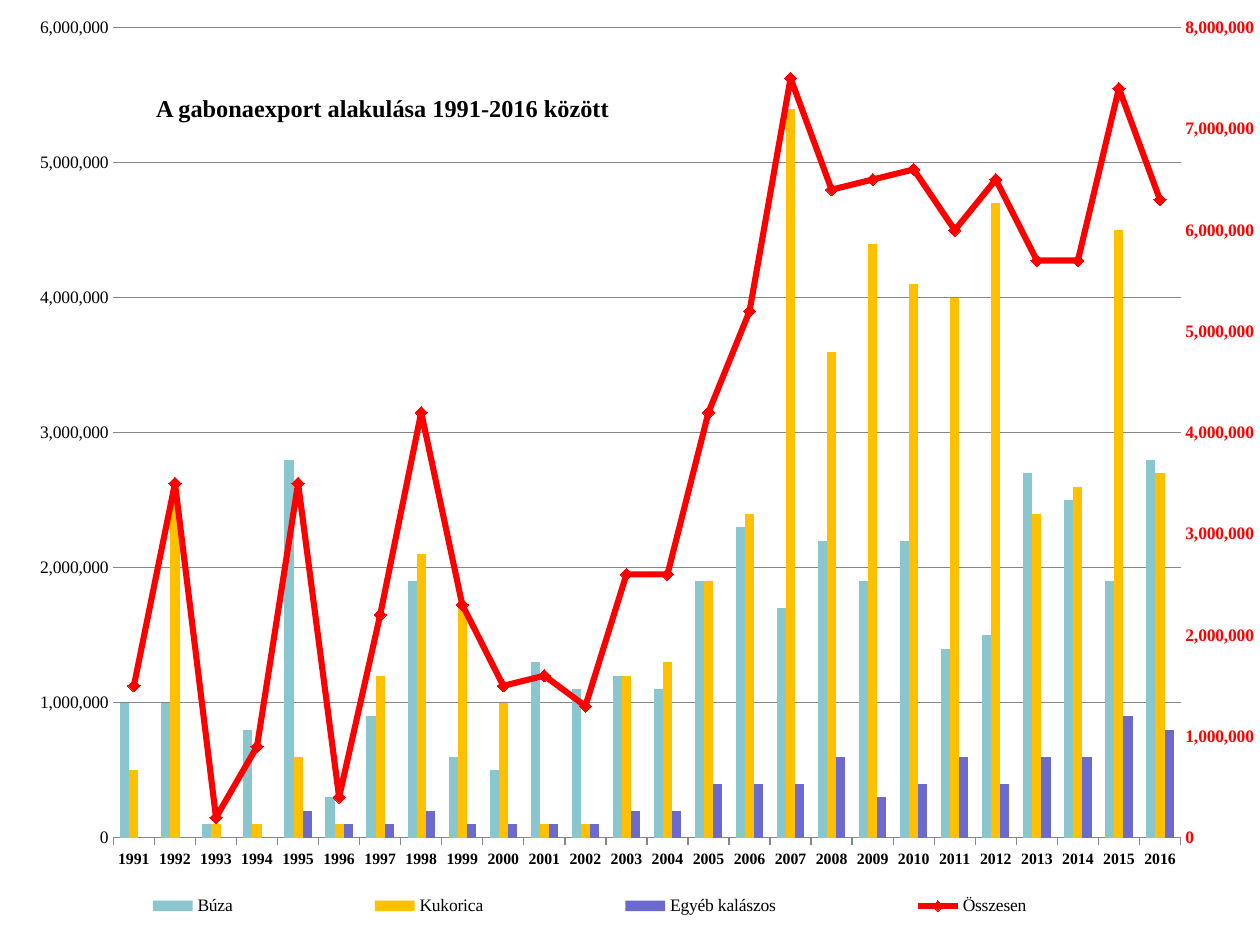
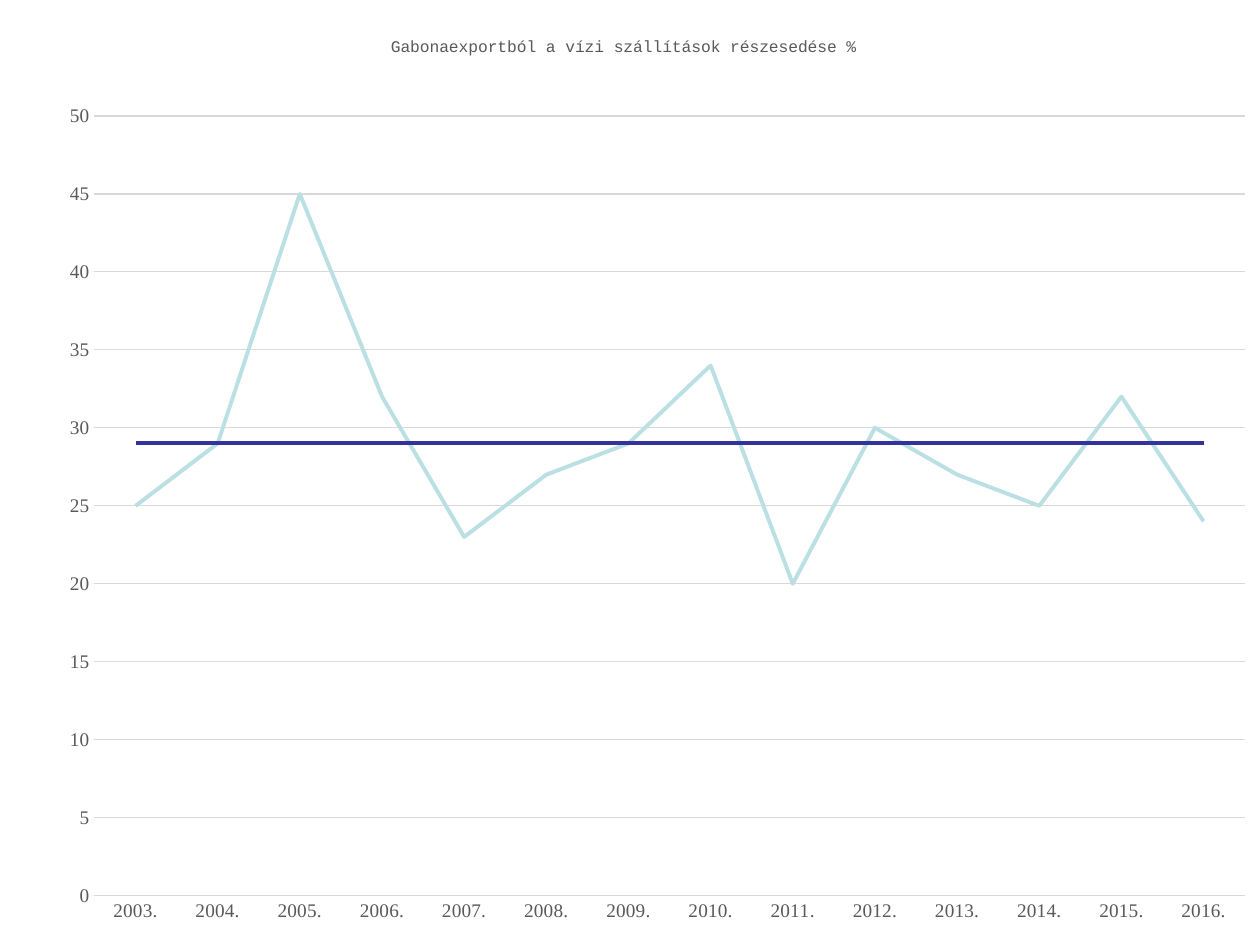
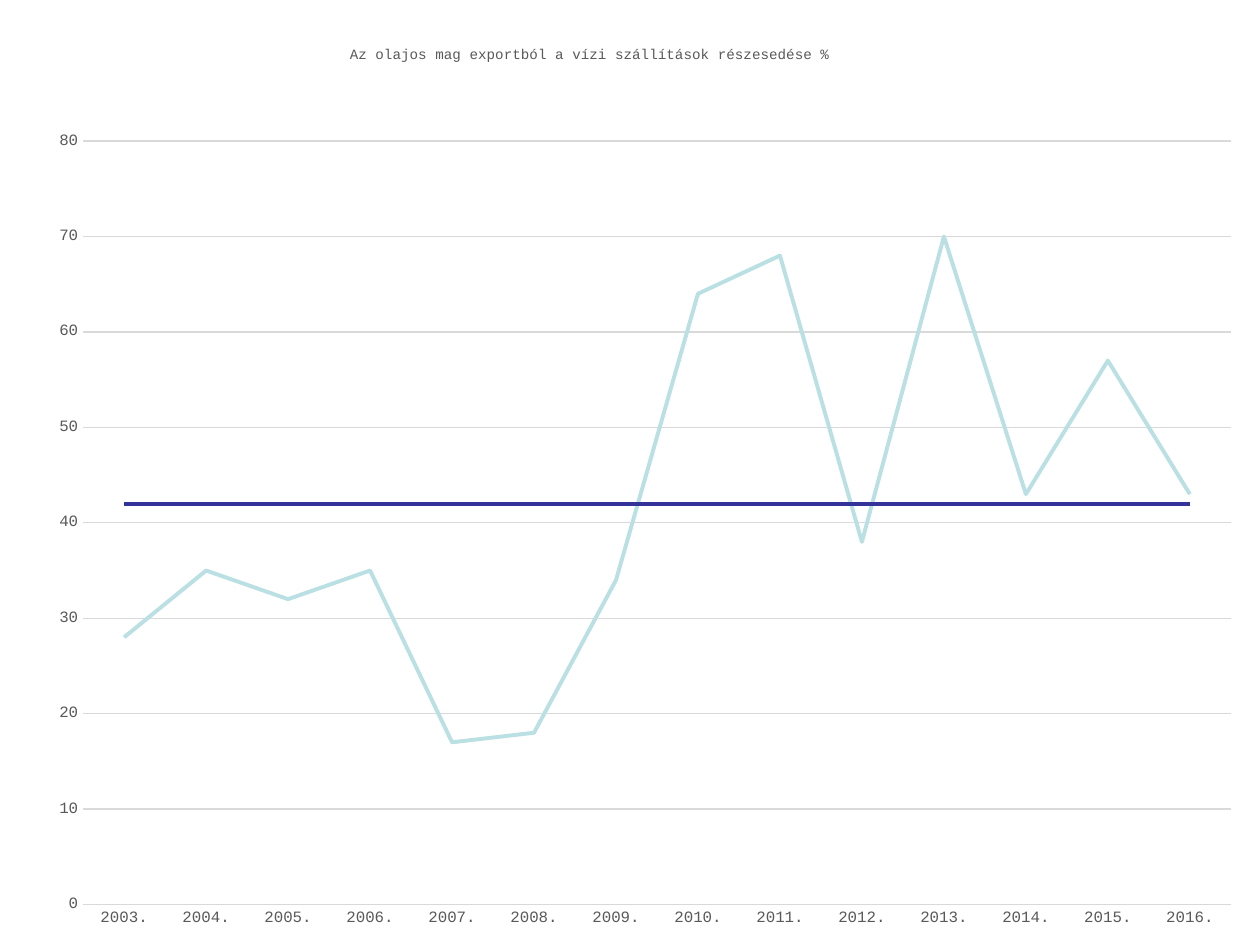
from copy import deepcopy

from pptx import Presentation
from pptx.chart.axis import CategoryAxis, ValueAxis
from pptx.chart.data import CategoryChartData
from pptx.dml.color import RGBColor
from pptx.enum.chart import XL_CHART_TYPE as ChartType
from pptx.enum.chart import XL_LEGEND_POSITION as LegendPosition
from pptx.enum.chart import XL_MARKER_STYLE as MarkerStyle
from pptx.enum.chart import XL_TICK_MARK as TickMark
from pptx.enum.text import MSO_AUTO_SIZE as AutoSize
from pptx.enum.text import PP_ALIGN as Align
from pptx.oxml import parse_xml
from pptx.oxml.ns import nsdecls, qn
from pptx.util import Inches, Pt

SERIF = "Times New Roman"
MONO = "Courier New"
BLACK = "000000"
RED = "FF0000"
TEXT_GREY = "595959"
GRID_GREY = "D9D9D9"
AXIS_GREY = "868686"
SHARE_COLORS = ["BBE0E3", "333399"]

EXPORT_COLORS = {"Búza": "8AC6CD", "Kukorica": "FFC000",
                 "Egyéb kalászos": "6B6BCF", "Összesen": RED}
EXPORT_MILLIONS = {
    "Búza": [1, 1, 0.1, 0.8, 2.8, 0.3, 0.9, 1.9, 0.6, 0.5, 1.3, 1.1, 1.2,
             1.1, 1.9, 2.3, 1.7, 2.2, 1.9, 2.2, 1.4, 1.5, 2.7, 2.5, 1.9, 2.8],
    "Kukorica": [0.5, 2.5, 0.1, 0.1, 0.6, 0.1, 1.2, 2.1, 1.7, 1, 0.1, 0.1, 1.2,
                 1.3, 1.9, 2.4, 5.4, 3.6, 4.4, 4.1, 4, 4.7, 2.4, 2.6, 4.5, 2.7],
    "Egyéb kalászos": [None, None, None, 0, 0.2, 0.1, 0.1, 0.2, 0.1, 0.1, 0.1, 0.1, 0.2,
                       0.2, 0.4, 0.4, 0.4, 0.6, 0.3, 0.4, 0.6, 0.4, 0.6, 0.6, 0.9, 0.8],
    "Összesen": [1.5, 3.5, 0.2, 0.9, 3.5, 0.4, 2.2, 4.2, 2.3, 1.5, 1.6, 1.3, 2.6,
                 2.6, 4.2, 5.2, 7.5, 6.4, 6.5, 6.6, 6, 6.5, 5.7, 5.7, 7.4, 6.3],
}
GRAIN_SHARE = [25, 29, 45, 32, 23, 27, 29, 34, 20, 30, 27, 25, 32, 24]
OILSEED_SHARE = [28, 35, 32, 35, 17, 18, 34, 64, 68, 38, 70, 43, 57, 43]


def rgb(value):
    return RGBColor.from_string(value)


def style_font(font, name, size, color, bold=False):
    font.name = name
    font.size = Pt(size)
    font.bold = bold
    font.color.rgb = rgb(color)


def style_line(line, color, width):
    line.color.rgb = rgb(color)
    line.width = Pt(width)


def add_title(slide, box, text, font_name, size, color, bold=False,
              align=Align.CENTER, wrap=False):
    shape = slide.shapes.add_textbox(*map(Inches, box))
    frame = shape.text_frame
    frame.word_wrap = wrap
    frame.auto_size = AutoSize.SHAPE_TO_FIT_TEXT
    paragraph = frame.paragraphs[0]
    paragraph.alignment = align
    run = paragraph.add_run()
    run.text = text
    style_font(paragraph.font, font_name, size, color, bold)
    run._r.get_or_add_rPr().set("baseline", "-8000")


def layout_xml(box, area, inner=False):
    fractions = [area[0] / box[2], area[1] / box[3], area[2] / box[2], area[3] / box[3]]
    target = '<c:layoutTarget val="inner"/>' if inner else ""
    modes = '<c:xMode val="edge"/><c:yMode val="edge"/>'
    sizes = "".join(f'<c:{tag} val="{value:.4f}"/>' for tag, value in zip("xywh", fractions))
    return parse_xml(f'<c:layout {nsdecls("c")}><c:manualLayout>{target}{modes}{sizes}'
                     "</c:manualLayout></c:layout>")


def add_chart(slide, box, plot_area, chart_type, categories, series, font_name, size):
    data = CategoryChartData()
    data.categories = categories
    for name, values in series.items():
        data.add_series(name, values)
    chart = slide.shapes.add_chart(chart_type, *map(Inches, box), data).chart
    chart.has_title = False
    chart.has_legend = False
    style_font(chart.font, font_name, size, BLACK)
    chart.plots[0].vary_by_categories = False
    plot_element = chart.element.xpath("c:chart/c:plotArea")[0]
    for layout in plot_element.findall(qn("c:layout")):
        plot_element.remove(layout)
    plot_element.insert(0, layout_xml(box, plot_area, inner=True))
    return chart


def style_value_axis(axis, maximum, step, number_format, grid_color=None):
    axis.minimum_scale = 0
    axis.maximum_scale = maximum
    axis.major_unit = step
    axis.has_major_gridlines = grid_color is not None
    if grid_color:
        style_line(axis.major_gridlines.format.line, grid_color, 0.75)
    axis.format.line.fill.background()
    axis.major_tick_mark = TickMark.NONE
    axis.tick_labels.number_format = number_format
    axis.tick_labels.number_format_is_linked = False


def move_to_right_axis(chart, series):
    plot_element = chart.element.xpath("c:chart/c:plotArea")[0]
    bar_element = plot_element.find(qn("c:barChart"))
    axis_ids = ["50010", "50020"]
    line_element = parse_xml(
        f'<c:lineChart {nsdecls("c")}><c:grouping val="standard"/><c:varyColors val="0"/>'
        '<c:marker val="1"/>'
        + "".join(f'<c:axId val="{axis_id}"/>' for axis_id in axis_ids)
        + "</c:lineChart>")
    series_element = series._element
    for invert in series_element.findall(qn("c:invertIfNegative")):
        series_element.remove(invert)
    line_element.insert(2, series_element)
    bar_element.addnext(line_element)

    category_element = deepcopy(plot_element.find(qn("c:catAx")))
    value_element = deepcopy(plot_element.find(qn("c:valAx")))
    for element, own_id, cross_id in ((category_element, *axis_ids),
                                      (value_element, *reversed(axis_ids))):
        element.find(qn("c:axId")).set("val", own_id)
        element.find(qn("c:crossAx")).set("val", cross_id)
    value_element.find(qn("c:axPos")).set("val", "r")
    value_element.find(qn("c:crosses")).set("val", "max")
    plot_element.find(qn("c:valAx")).addnext(value_element)
    value_element.addnext(category_element)
    CategoryAxis(category_element).visible = False
    return ValueAxis(value_element)


def add_export_chart(slide, box):
    series = {name: [None if value is None else round(value * 1_000_000) for value in values]
              for name, values in EXPORT_MILLIONS.items()}
    years = [str(year) for year in range(1991, 2017)]
    chart = add_chart(slide, box, (0.9, 0.22, 8.47, 6.43), ChartType.COLUMN_CLUSTERED,
                      years, series, SERIF, 10)
    bars = chart.plots[0]
    bars.gap_width = 150
    bars.overlap = 0
    left_axis = chart.value_axis
    right_axis = move_to_right_axis(chart, bars.series[3])

    style_value_axis(left_axis, 6_000_000, 1_000_000, "#,##0", AXIS_GREY)
    style_value_axis(right_axis, 8_000_000, 1_000_000, "#,##0")
    style_font(right_axis.tick_labels.font, SERIF, 10, RED, bold=True)
    style_font(chart.category_axis.tick_labels.font, SERIF, 9, BLACK, bold=True)
    style_line(chart.category_axis.format.line, AXIS_GREY, 0.75)
    chart.category_axis.major_tick_mark = TickMark.OUTSIDE

    for bar in chart.plots[0].series:
        bar.format.fill.solid()
        bar.format.fill.fore_color.rgb = rgb(EXPORT_COLORS[bar.name])
    total = chart.plots[1].series[0]
    total.smooth = False
    style_line(total.format.line, EXPORT_COLORS[total.name], 3.5)
    total.marker.style = MarkerStyle.DIAMOND
    total.marker.size = 7
    total.marker.format.fill.solid()
    total.marker.format.fill.fore_color.rgb = rgb(RED)
    style_line(total.marker.format.line, RED, 0.75)

    chart.has_legend = True
    legend = chart.legend
    legend.position = LegendPosition.RIGHT
    legend.include_in_layout = False
    style_font(legend.font, SERIF, 10, BLACK)
    for layout in legend._element.findall(qn("c:layout")):
        legend._element.remove(layout)
    legend._element.find(qn("c:legendPos")).addnext(layout_xml(box, (0.13, 6.98, 9.1, 0.42)))


def add_share_chart(slide, box, plot_area, shares, average, maximum, step,
                    font_name, size, label_size):
    series = {"Series 1": shares, "Series 2": [average] * len(shares)}
    years = [f"{year}." for year in range(2003, 2017)]
    chart = add_chart(slide, box, plot_area, ChartType.LINE, years, series, font_name, size)
    style_value_axis(chart.value_axis, maximum, step, "General", GRID_GREY)
    chart.category_axis.major_tick_mark = TickMark.NONE
    style_line(chart.category_axis.format.line, GRID_GREY, 0.75)
    for axis in (chart.category_axis, chart.value_axis):
        style_font(axis.tick_labels.font, font_name, label_size, TEXT_GREY)
    for line, color in zip(chart.plots[0].series, SHARE_COLORS):
        line.smooth = False
        style_line(line.format.line, color, 2.25)


def main():
    presentation = Presentation()
    presentation.slide_width = Inches(10)
    presentation.slide_height = Inches(7.5)
    blank = presentation.slide_layouts[6]
    export_slide, grain_slide, oilseed_slide = (
        presentation.slides.add_slide(blank) for _ in range(3))

    add_export_chart(export_slide, (0, 0, 10, 7.45))
    add_title(export_slide, (1.14, 0.52, 4.38, 0.37),
              "A gabonaexport alakulása 1991-2016 között",
              SERIF, 24, BLACK, bold=True, align=Align.LEFT)

    add_title(grain_slide, (2.24, 0.13, 5.42, 0.37),
              "Gabonaexportból a vízi szállítások részesedése %", MONO, 16, TEXT_GREY)
    add_share_chart(grain_slide, (0.2, 0.6, 9.8, 6.9), (0.55, 0.32, 9.13, 6.19),
                    GRAIN_SHARE, 29, 50, 5, SERIF, 11, 11)

    add_share_chart(oilseed_slide, (0.28, 0.92, 9.69, 6.58), (0.38, 0.2, 9.11, 6.06),
                    OILSEED_SHARE, 42, 80, 10, MONO, 10, 9)
    add_title(oilseed_slide, (1.69, 0.21, 5.98, 0.34),
              "Az olajos mag exportból a vízi szállítások részesedése %",
              MONO, 14, TEXT_GREY, wrap=True)

    presentation.save("out.pptx")


if __name__ == "__main__":
    main()
